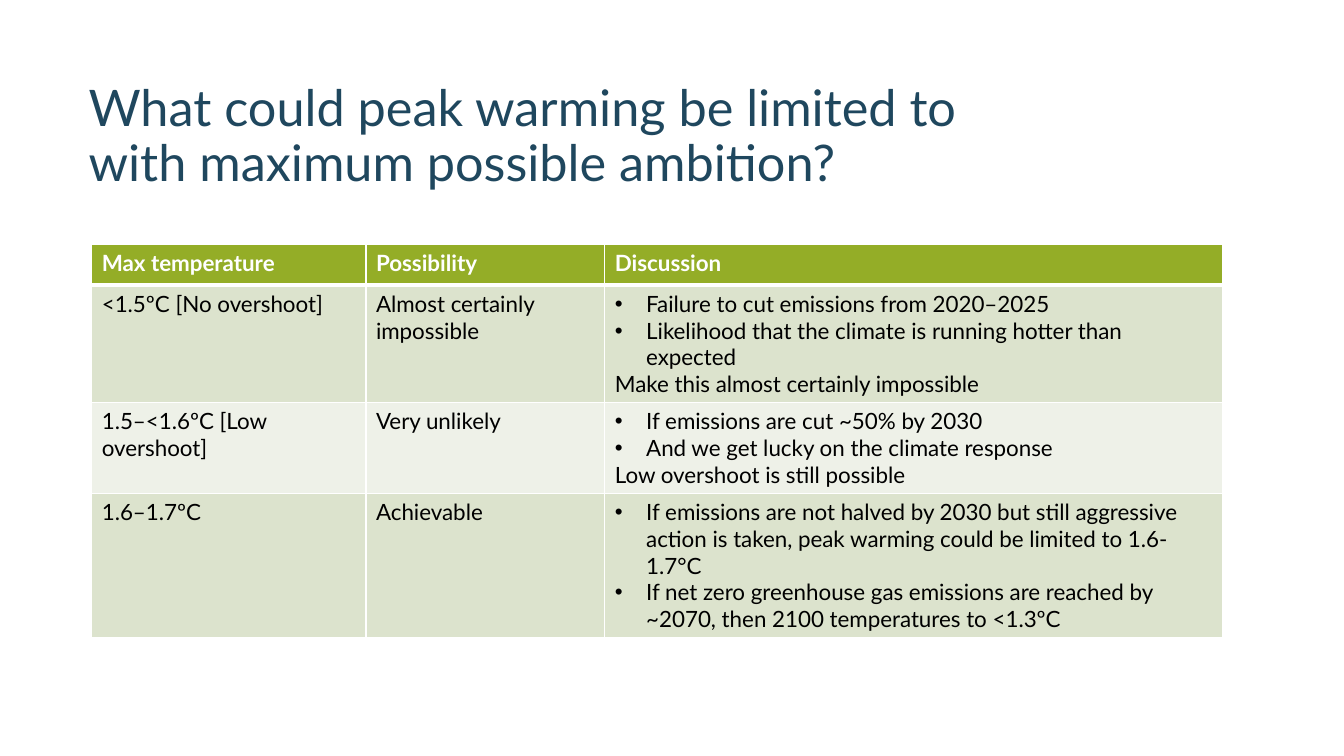
from lxml.etree import SubElement
from pptx import Presentation
from pptx.dml.color import RGBColor as RGB
from pptx.enum.text import MSO_ANCHOR as Anchor
from pptx.oxml.ns import qn
from pptx.util import Inches, Pt

COLORS = {
    "title": "1F475E",
    "header": "94AD27",
    "band_dark": "DCE3CD",
    "band_light": "EEF1E8",
    "text": "000000",
    "white": "FFFFFF",
}
HEADINGS = ["Max temperature", "Possibility", "Discussion"]
# Each discussion entry: bullets, then an optional conclusion
OUTCOMES = [
    ("<1.5ºC [No overshoot]", "Almost certainly impossible",
     ["Failure to cut emissions from 2020–2025",
      "Likelihood that the climate is running hotter than expected"],
     "Make this almost certainly impossible"),
    ("1.5–<1.6ºC [Low overshoot]", "Very unlikely",
     ["If emissions are cut ~50% by 2030",
      "And we get lucky on the climate response"],
     "Low overshoot is still possible"),
    ("1.6–1.7ºC", "Achievable",
     ["If emissions are not halved by 2030 but still aggressive action is taken, "
      "peak warming could be limited to 1.6-1.7°C",
      "If net zero greenhouse gas emissions are reached by ~2070, "
      "then 2100 temperatures to <1.3ºC"],
     None),
]
COLUMN_WIDTHS = [2.72, 2.37, 6.13]
ROW_HEIGHTS = [0.41, 1.16, 0.89, 1.43]


def add_solid_color(parent, color):
    SubElement(parent, qn("a:srgbClr")).set("val", COLORS[color])


def write_text(frame, text, first=True, size=16, color="text", bold=False,
               bullet=False, spacing=None):
    paragraph = frame.paragraphs[0] if first else frame.add_paragraph()
    if bullet:
        properties = paragraph._p.get_or_add_pPr()
        properties.set("marL", str(Inches(0.31)))
        properties.set("indent", str(-Inches(0.31)))
        add_solid_color(SubElement(properties, qn("a:buClr")), "text")
        SubElement(properties, qn("a:buFont")).set("typeface", "Arial")
        SubElement(properties, qn("a:buChar")).set("char", "•")
    if spacing:
        paragraph.line_spacing = spacing
    run = paragraph.add_run()
    run.text = text
    run.font.name = "Lato"
    run.font.size = Pt(size)
    run.font.bold = bold
    run.font.color.rgb = RGB.from_string(COLORS[color])


class SlideBuilder:
    def __init__(self, slide):
        self.slide = slide

    def title(self, text, left, top, width, height):
        box = self.slide.shapes.add_textbox(
            Inches(left), Inches(top), Inches(width), Inches(height))
        box.text_frame.word_wrap = True
        box.text_frame.vertical_anchor = Anchor.MIDDLE
        write_text(box.text_frame, text, size=36, color="title", spacing=0.9)

    def table(self, left, top, widths, heights):
        frame = self.slide.shapes.add_table(
            len(heights), len(widths), Inches(left), Inches(top),
            Inches(sum(widths)), Inches(sum(heights)))
        for column, width in zip(frame.table.columns, widths):
            column.width = Inches(width)
        for row, height in zip(frame.table.rows, heights):
            row.height = Inches(height)
        return frame.table

    def cell(self, cell, entries, fill, top_border=1, bottom_border=1):
        """Fill one cell; entries are (text, format) pairs."""
        properties = cell._tc.get_or_add_tcPr()
        borders = {"lnL": 1, "lnR": 1, "lnT": top_border, "lnB": bottom_border}
        for side, width in borders.items():
            line = SubElement(properties, qn("a:" + side), w=str(Pt(width)))
            add_solid_color(SubElement(line, qn("a:solidFill")), "white")
        cell.fill.solid()
        cell.fill.fore_color.rgb = RGB.from_string(COLORS[fill])
        for index, (text, style) in enumerate(entries):
            write_text(cell.text_frame, text, first=index == 0, **style)


def main():
    deck = Presentation()
    deck.slide_width, deck.slide_height = Inches(13.33), Inches(7.5)
    builder = SlideBuilder(deck.slides.add_slide(deck.slide_layouts[6]))

    # Title
    builder.title("What could peak warming be limited to with maximum possible ambition?",
                  0.78, 0.64, 8.88, 1.45)

    # Table header
    warming = builder.table(0.91, 2.42, COLUMN_WIDTHS, ROW_HEIGHTS)
    for column, heading in enumerate(HEADINGS):
        builder.cell(warming.cell(0, column),
                     [(heading, {"color": "white", "bold": True})],
                     "header", bottom_border=3)

    # Outcome rows with alternating bands
    for row, (temperature, possibility, reasons, conclusion) in enumerate(OUTCOMES, 1):
        discussion = [(reason, {"bullet": True}) for reason in reasons]
        if conclusion:
            discussion.append((conclusion, {}))
        band = "band_dark" if row % 2 else "band_light"
        for column, entries in enumerate([[(temperature, {})], [(possibility, {})], discussion]):
            builder.cell(warming.cell(row, column), entries, band,
                         top_border=3 if row == 1 else 1)

    deck.save("out.pptx")


if __name__ == "__main__":
    main()
